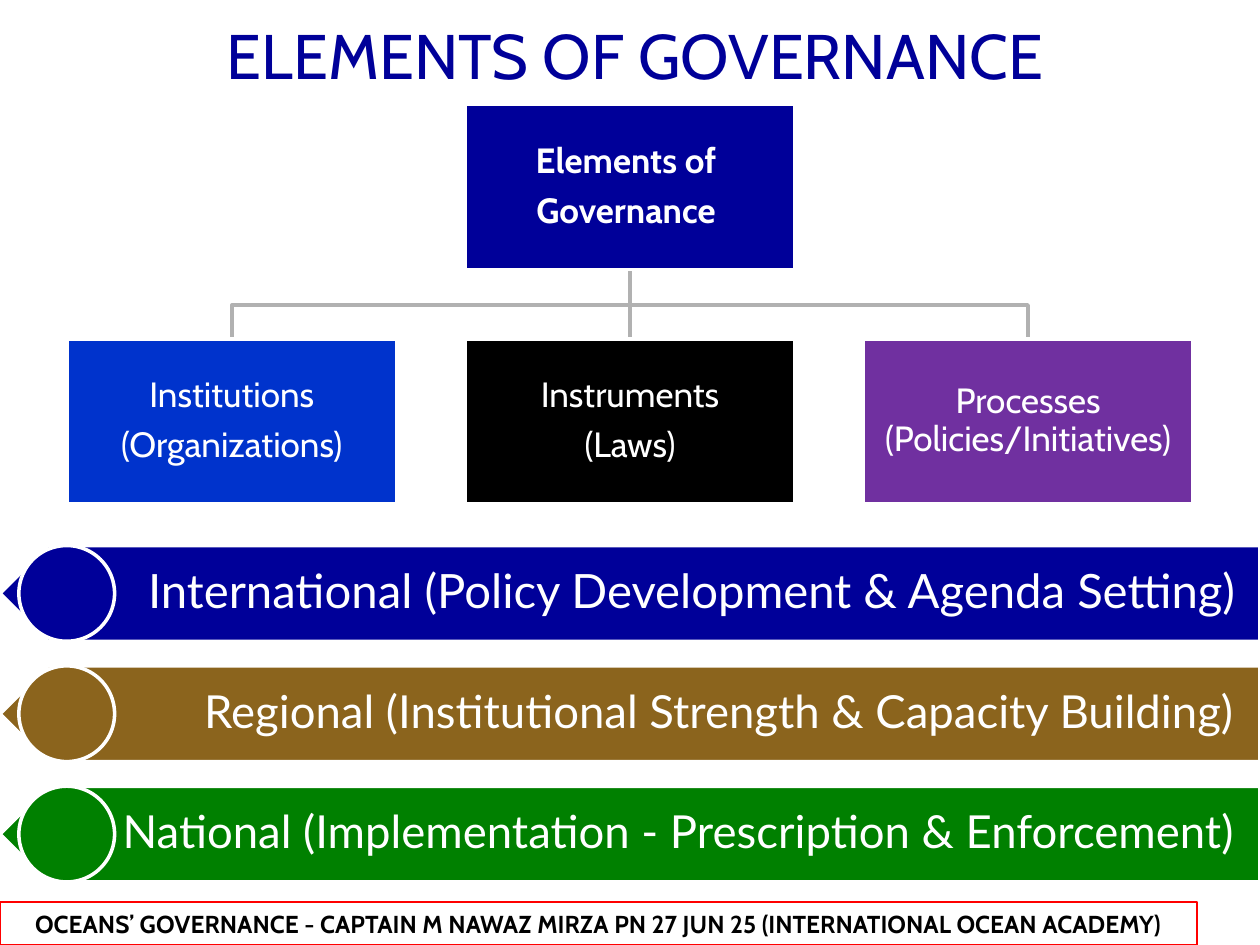
from pptx import Presentation, util as u
from pptx.dml.color import RGBColor
from pptx.enum import shapes, text
from pptx.oxml.ns import qn
from lxml import etree

WIDTH, HEIGHT = 10, 7.5
TITLE = "ELEMENTS OF GOVERNANCE"
FOOTER = "OCEANS’ GOVERNANCE - CAPTAIN M NAWAZ MIRZA PN 27 JUN 25 (INTERNATIONAL OCEAN ACADEMY)"
ROOT = (["Elements of ", "Governance "], "000099")
BRANCHES = [
    (["Institutions", "(Organizations)"], "0033CC"),
    (["Instruments", "(Laws)"], "000000"),
    (["Processes (Policies/Initiatives)"], "7030A0"),
]
LEVELS = [
    ("International (Policy Development & Agenda Setting)", "000099", 27),
    ("Regional (Institutional Strength & Capacity Building)", "8B641D", 26),
    ("National (Implementation - Prescription & Enforcement)", "008000", 26),
]
NODE_W, NODE_H, NODE_PITCH = 2.62, 1.31, 3.16
ROOT_TOP, BRANCH_TOP, BUS = 0.83, 2.69, 2.42
BAR_TOP, BAR_H, BAR_BOTTOM = 4.33, 0.76, 7
BAR_PITCH = (BAR_BOTTOM - BAR_H - BAR_TOP) / (len(LEVELS) - 1)
NODE_TEXT = {"size": 20, "name": "Cabin", "color": "FFFFFF"}
NODE_SPACING = {"alignment": text.PP_ALIGN.CENTER, "line_spacing": 0.9, "space_after": u.Pt(7)}

deck = Presentation()
deck.slide_width, deck.slide_height = u.Inches(WIDTH), u.Inches(HEIGHT)
page = deck.slides.add_slide(deck.slide_layouts[6])


def rgb(value):
    return RGBColor.from_string(value)


def inches(*values):
    return [u.Inches(value) for value in values]


def set_line(item, color, width):
    item.line.color.rgb = rgb(color)
    item.line.width = u.Pt(width)


def add_block(kind, place, fill, line="FFFFFF", width=2):
    block = page.shapes.add_shape(kind, *inches(*place))
    block.shadow.inherit = False
    block.fill.solid()
    block.fill.fore_color.rgb = rgb(fill)
    set_line(block, line, width)
    return block


def write(box, lines, font, layout, margins=(0.1, 0.05, 0.1, 0.05), wrap=True,
          anchor=text.MSO_ANCHOR.MIDDLE):
    frame = box.text_frame
    frame.word_wrap, frame.vertical_anchor = wrap, anchor
    for side, margin in zip(("left", "top", "right", "bottom"), margins):
        setattr(frame, f"margin_{side}", u.Inches(margin))
    for index, line in enumerate(lines):
        para = frame.add_paragraph() if index else frame.paragraphs[0]
        for key, value in layout.items():
            setattr(para, key, value)
        span = para.add_run()
        span.text = line
        for key, value in font.items():
            if key == "color":
                span.font.color.rgb = rgb(value)
            else:
                setattr(span.font, key, u.Pt(value) if key == "size" else value)


def add_node(center, top, lines, fill, bold=False):
    place = (center - NODE_W / 2, top, NODE_W, NODE_H)
    node = add_block(shapes.MSO_SHAPE.RECTANGLE, place, fill)
    write(node, lines, {**NODE_TEXT, "bold": bold}, NODE_SPACING, (0.01,) * 4)


def add_branch_line(center):
    middle, start = WIDTH / 2, ROOT_TOP + NODE_H
    if center == middle:
        link = page.shapes.add_connector(
            shapes.MSO_CONNECTOR.STRAIGHT, *inches(middle, start, middle, BRANCH_TOP))
        etree.SubElement(link._element.spPr, qn("a:effectLst"))
        set_line(link, "B1B1B1", 2)
        return
    route = page.shapes.build_freeform(*inches(middle, start))
    corners = [(middle, BUS), (center, BUS), (center, BRANCH_TOP)]
    route.add_line_segments([inches(*corner) for corner in corners], close=False)
    link = route.convert_to_shape()
    link.shadow.inherit = False
    link.fill.background()
    set_line(link, "B1B1B1", 2)


def add_level(top, label, color, size):
    bar = add_block(shapes.MSO_SHAPE.PENTAGON, (0, top, WIDTH, BAR_H), color)
    bar.rotation = 180
    box = page.shapes.add_textbox(*inches(0.19, top, WIDTH - 0.19, BAR_H))
    write(box, [label], {"size": size, "name": "Lato", "color": "FFFFFF"},
          {"alignment": text.PP_ALIGN.RIGHT, "line_spacing": 0.9}, (0.34, 0.11, 0.2, 0.11))
    add_block(shapes.MSO_SHAPE.OVAL, (0.15, top, BAR_H, BAR_H), color)


footer = add_block(shapes.MSO_SHAPE.RECTANGLE, (0, 7.16, 9.5, 0.34), "FFFFFF", "FF0000", 0.75)
write(footer, [FOOTER], {"size": 14, "name": "Cabin", "color": "000000", "bold": True},
      {"alignment": text.PP_ALIGN.CENTER})

centers = [WIDTH / 2 + (column - 1) * NODE_PITCH for column in range(len(BRANCHES))]
for center in centers:
    add_branch_line(center)
add_node(WIDTH / 2, ROOT_TOP, *ROOT, bold=True)
for center, branch in zip(centers, BRANCHES):
    add_node(center, BRANCH_TOP, *branch)

title = page.shapes.add_textbox(*inches(1.75, 0.08, 6.58, 0.58))
write(title, [TITLE], {"size": 36, "name": "Cabin", "color": "000099"},
      {"alignment": text.PP_ALIGN.CENTER}, (0, 0.05, 0, 0.05), wrap=False,
      anchor=text.MSO_ANCHOR.TOP)

for row, level in enumerate(LEVELS):
    add_level(BAR_TOP + row * BAR_PITCH, *level)

deck.save("out.pptx")
